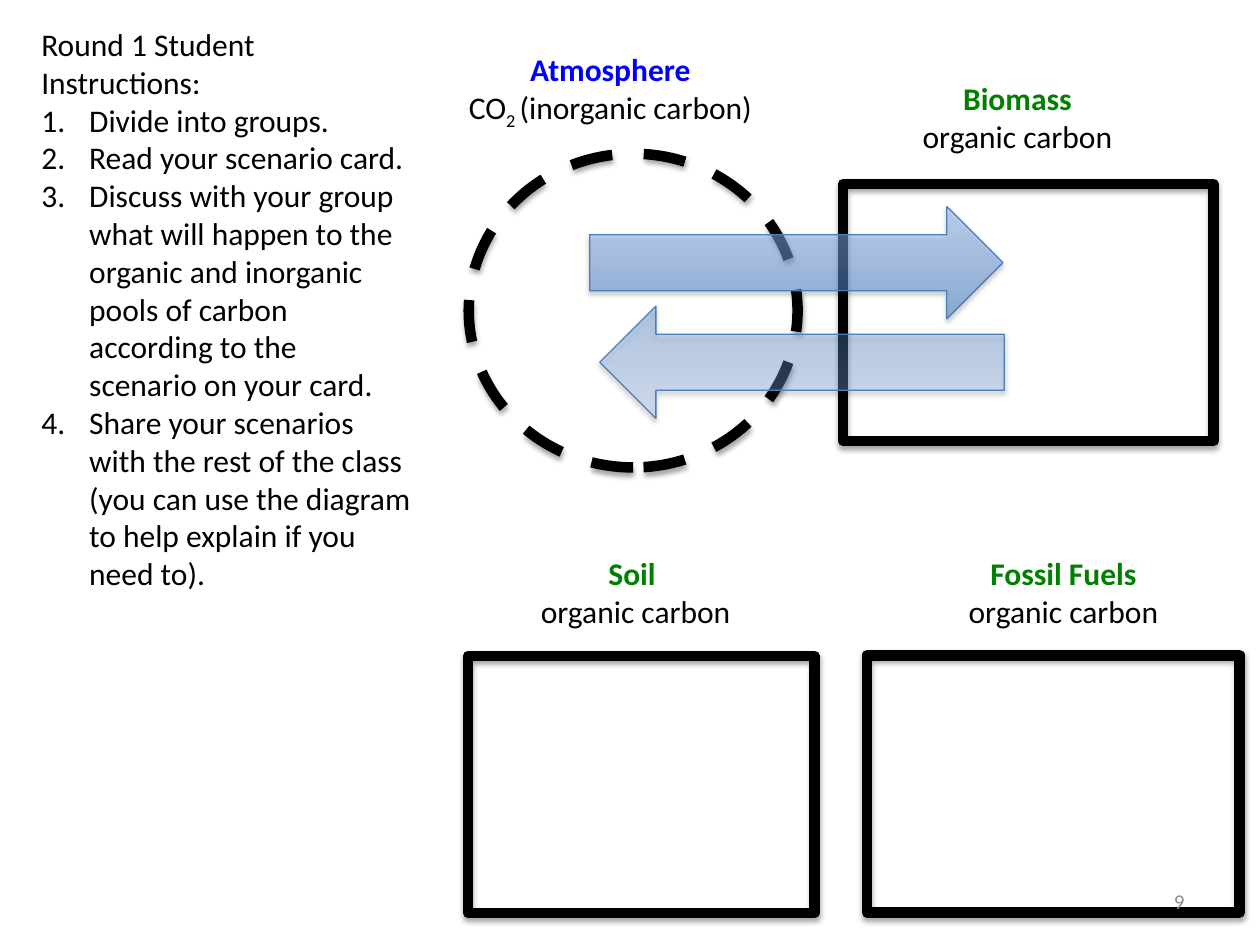
from dataclasses import dataclass

from lxml import etree
from pptx import Presentation
from pptx import util as u
from pptx.dml import color as dml_color
from pptx.enum import dml, shapes, text
from pptx.oxml import ns

PX = 9144  # one px is a hundredth of an inch
FONT = "Calibri"
COLORS = {
    "black": "000000", "blue": "0000FF", "green": "008000", "grey": "8C8C8C",
    "arrow_dark": "3F80CE", "arrow_light": "A4C4FF", "arrow_line": "4B7EBC",
}


@dataclass
class Box:
    left: int
    top: int
    width: int
    height: int

    def emu(self) -> tuple[int, ...]:
        return tuple(n * PX for n in (self.left, self.top, self.width, self.height))


@dataclass
class Pool:
    box: Box
    kind: int = shapes.MSO_SHAPE.RECTANGLE
    dashed: bool = False


@dataclass
class Label:
    box: Box
    title: str
    color: str
    runs: tuple[tuple[str, int], ...] = (("organic carbon", 0),)  # text, baseline


@dataclass
class Arrow:
    box: Box
    rotation: int
    opacity: int


POOLS = [
    Pool(Box(714, 101, 204, 294)),
    Pool(Box(407, 485, 204, 275)),
    Pool(Box(734, 474, 204, 296)),
    Pool(Box(378, 116, 249, 261), shapes.MSO_SHAPE.OVAL, dashed=True),
]
LABELS = [
    Label(Box(336, 37, 297, 67), "Atmosphere", "blue",
          (("CO", 0), ("2 ", -25), ("(inorganic carbon)", 0))),
    Label(Box(363, 437, 283, 67), "Soil ", "green"),
    Label(Box(688, 60, 239, 67), "Biomass", "green"),
    Label(Box(688, 437, 312, 67), "Fossil Fuels", "green"),
]
ARROWS = [
    Arrow(Box(468, 164, 328, 89), 0, 49),
    Arrow(Box(476, 243, 321, 89), 180, 32),
]
HEADING = "Round 1 Student Instructions:"
STEPS = [
    "Divide into groups.",
    "Read your scenario card.",
    "Discuss with your group what will happen to the organic and inorganic pools "
    "of carbon according to the scenario on your card.",
    "Share your scenarios with the rest of the class (you can use the diagram to "
    "help explain if you need to).",
]


def rgb(name: str) -> dml_color.RGBColor:
    return dml_color.RGBColor.from_string(COLORS[name])


def add_child(parent, tag: str, **attributes):
    return etree.SubElement(parent, ns.qn(tag), attributes)


def add_shadow(shape) -> None:
    shape.shadow.inherit = False
    effects = shape.element.spPr.find(ns.qn("a:effectLst"))
    shadow = add_child(effects, "a:outerShdw", blurRad=str(u.Pt(3.1)), dist=str(u.Pt(1.8)),
                       dir="5400000", rotWithShape="0")
    shade = add_child(shadow, "a:srgbClr", val=COLORS["black"])
    add_child(shade, "a:alpha", val="35000")


def add_pool(slide, pool: Pool) -> None:
    shape = slide.shapes.add_shape(pool.kind, *pool.box.emu())
    shape.rotation = 270
    shape.fill.background()
    shape.line.color.rgb = rgb("black")
    shape.line.width = u.Pt(6)
    if pool.dashed:
        shape.line.dash_style = dml.MSO_LINE.DASH
    add_shadow(shape)


def add_arrow(slide, arrow: Arrow) -> None:
    shape = slide.shapes.add_shape(shapes.MSO_SHAPE.RIGHT_ARROW, *arrow.box.emu())
    shape.rotation = arrow.rotation
    shape.fill.gradient()
    shape.fill.gradient_angle = 90
    for stop, name in zip(shape.fill.gradient_stops, ("arrow_dark", "arrow_light")):
        stop.color.rgb = rgb(name)
    for shade in list(shape.element.spPr.iter(ns.qn("a:srgbClr"))):
        add_child(shade, "a:alpha", val=str(arrow.opacity * 1000))
    shape.line.color.rgb = rgb("arrow_line")
    shape.line.width = u.Pt(0.75)
    add_shadow(shape)


def add_text_frame(slide, box: Box):
    frame = slide.shapes.add_textbox(*box.emu()).text_frame
    frame.word_wrap = True
    return frame


def set_font(paragraph, size: int, color: str, bold: bool = False) -> None:
    font = paragraph.font
    font.name, font.size, font.bold = FONT, u.Pt(size), bold
    font.color.rgb = rgb(color)


def add_label(slide, label: Label) -> None:
    frame = add_text_frame(slide, label.box)
    frame.auto_size = text.MSO_AUTO_SIZE.SHAPE_TO_FIT_TEXT
    frame.margin_left = frame.margin_right = 6 * PX
    frame.margin_top = frame.margin_bottom = 3 * PX
    title, detail = frame.paragraphs[0], frame.add_paragraph()
    title.text = label.title
    set_font(title, 18, label.color, bold=True)
    set_font(detail, 18, "black")
    for words, baseline in label.runs:
        run = detail.add_run()
        run.text = words
        if baseline:
            run.font._element.set("baseline", str(baseline * 1000))
    for paragraph in (title, detail):
        paragraph.alignment = text.PP_ALIGN.CENTER


def add_instructions(slide, box: Box) -> None:
    frame = add_text_frame(slide, box)
    frame.auto_size = text.MSO_AUTO_SIZE.SHAPE_TO_FIT_TEXT
    frame.text = HEADING
    set_font(frame.paragraphs[0], 18, "black")
    for step in STEPS:
        paragraph = frame.add_paragraph()
        paragraph.text = step
        set_font(paragraph, 18, "black")
        properties = paragraph._p.get_or_add_pPr()
        properties.set("marL", str(38 * PX))
        properties.set("indent", str(-38 * PX))
        numbering = etree.Element(ns.qn("a:buAutoNum"), type="arabicPeriod")
        properties.insert(0, numbering)


def add_page_number(slide, box: Box, number: str) -> None:
    frame = add_text_frame(slide, box)
    frame.vertical_anchor = text.MSO_ANCHOR.MIDDLE
    frame.text = number
    frame.paragraphs[0].alignment = text.PP_ALIGN.RIGHT
    set_font(frame.paragraphs[0], 12, "grey")


def main() -> None:
    presentation = Presentation()
    presentation.slide_width, presentation.slide_height = 1000 * PX, 750 * PX
    slide = presentation.slides.add_slide(presentation.slide_layouts[6])

    # Carbon pools and their names
    for pool in POOLS:
        add_pool(slide, pool)
    for label in LABELS:
        add_label(slide, label)

    # Page number and instructions
    add_page_number(slide, Box(717, 695, 233, 40), "9")
    add_instructions(slide, Box(23, 15, 313, 464))

    # Flows between atmosphere and biomass
    for arrow in ARROWS:
        add_arrow(slide, arrow)

    presentation.save("out.pptx")


if __name__ == "__main__":
    main()
